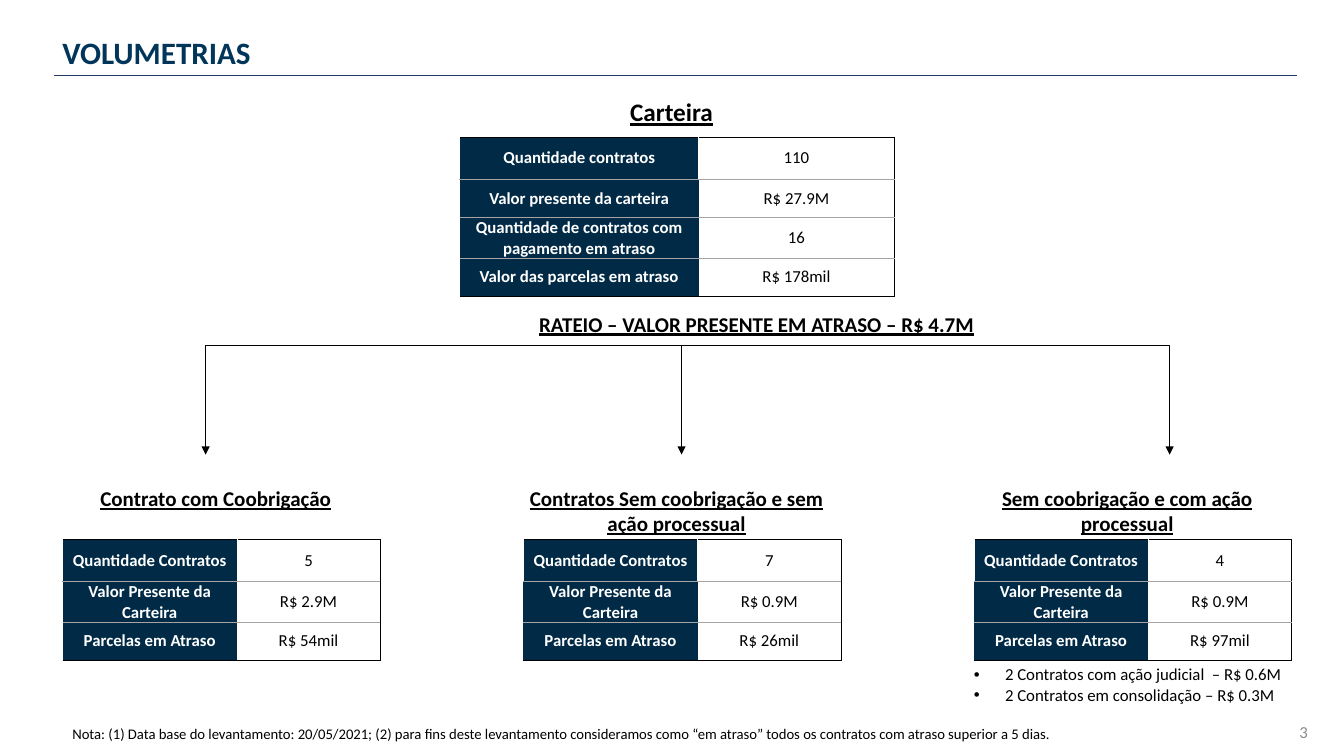
import pptx
import pptx.util
import pptx.dml.color
import pptx.enum.shapes
import pptx.enum.text
import pptx.oxml
import pptx.oxml.ns
import lxml.etree

# Content
TITLE = "VOLUMETRIAS"
PAGE_NUMBER = "3"
PORTFOLIO = ("Carteira", [
    ("Quantidade contratos", "110"),
    ("Valor presente da carteira", "R$ 27.9M"),
    ("Quantidade de contratos com pagamento em atraso", "16"),
    ("Valor das parcelas em atraso", "R$ 178mil"),
])
SPLIT = "RATEIO – VALOR PRESENTE EM ATRASO – R$ 4.7M"
BRANCH_LABELS = ("Quantidade Contratos", "Valor Presente da Carteira", "Parcelas em Atraso")
BRANCHES = [
    ("Contrato com Coobrigação", ("5", "R$ 2.9M", "R$ 54mil")),
    ("Contratos Sem coobrigação e sem ação processual", ("7", "R$ 0.9M", "R$ 26mil")),
    ("Sem coobrigação e com ação processual", ("4", "R$ 0.9M", "R$ 97mil")),
]
DETAILS = ["2 Contratos com ação judicial  – R$ 0.6M", "2 Contratos em consolidação – R$ 0.3M"]
NOTE = ("Nota: (1) Data base do levantamento: 20/05/2021; (2) para fins deste levantamento "
        "consideramos como “em atraso” todos os contratos com atraso superior a 5 dias.")

COLORS = {"title": "02355A", "rule": "203864", "navy": "002A46", "white": "FFFFFF",
          "black": "000000", "grid": "A5A5A5", "number": "8C8C8C"}
FONT = "Calibri"

# Grid, in inches
WIDTH, HEIGHT = 13.33, 7.5
BRANCH_LEFTS = (0.62, 5.19, 9.66)
BRANCH_COLUMNS, PORTFOLIO_COLUMNS = (1.73, 1.42), (2.37, 1.94)
FIRST_ROW, OTHER_ROW = 0.42, 0.38
INSET = 0.1
HEADING_WIDTH = 3.24
HEADING_TOP, BRANCH_TOP = 4.77, 5.35
ARROW_TOP, ARROW_BOTTOM = 3.43, 4.51
ARROW_ENDS = (2.04, 6.76, 11.6)
ELBOW_START = 6.88

inch = pptx.util.Inches
Align = pptx.enum.text.PP_ALIGN
Anchor = pptx.enum.text.MSO_ANCHOR
Connector = pptx.enum.shapes.MSO_CONNECTOR

deck = pptx.Presentation()
deck.slide_width, deck.slide_height = inch(WIDTH), inch(HEIGHT)
page = deck.slides.add_slide(deck.slide_layouts[6])


def color(name):
    return pptx.dml.color.RGBColor.from_string(COLORS[name])


def child(parent, tag, **attributes):
    element = lxml.etree.SubElement(parent, pptx.oxml.ns.qn(tag))
    for key, value in attributes.items():
        element.set(key, value)
    return element


def write(frame, text, size=12, ink="black", bold=False, underline=False,
          align=Align.LEFT, spacing=None, bullet=False):
    lines = [text] if isinstance(text, str) else text
    for index, line in enumerate(lines):
        para = frame.add_paragraph() if index else frame.paragraphs[0]
        if bullet:
            properties = para._p.get_or_add_pPr()
            properties.set("marL", str(inch(0.31)))
            properties.set("indent", str(-inch(0.31)))
            child(properties, "a:buFont", typeface="Arial")
            child(properties, "a:buChar", char="•")
        para.alignment = align
        if spacing:
            para.line_spacing = spacing
        span = para.add_run()
        span.text = line
        font = span.font
        font.name, font.size, font.bold = FONT, pptx.util.Pt(size), bold
        font.underline = underline
        font.color.rgb = color(ink)


def add_text(text, left, top, width, height, wrap=True, anchor=Anchor.TOP, **style):
    box = page.shapes.add_textbox(inch(left), inch(top), inch(width), inch(height))
    box.text_frame.word_wrap = wrap
    box.text_frame.vertical_anchor = anchor
    write(box.text_frame, text, **style)


def add_heading(text, left, top, height, size):
    add_text(text, left, top, HEADING_WIDTH, height, size=size, bold=True,
             underline=True, align=Align.CENTER)


def add_line(kind, start, end, ink, arrow=False):
    line = page.shapes.add_connector(kind, *(inch(value) for value in start + end))
    line.line.color.rgb = color(ink)
    line.line.width = pptx.util.Pt(0.5)
    if arrow:
        child(line.line._get_or_add_ln(), "a:tailEnd", type="triangle")
    if kind == Connector.ELBOW:
        guides = line._element.spPr.find(".//" + pptx.oxml.ns.qn("a:avLst"))
        if guides is None:
            guides = child(line._element.spPr.find(pptx.oxml.ns.qn("a:prstGeom")), "a:avLst")
        child(guides, "a:gd", name="adj1", fmla="val 100000")
    child(line._element.spPr, "a:effectLst")


def set_borders(cell, **sides):
    """Border colour by side; None leaves that side without a line."""
    properties = cell._tc.get_or_add_tcPr()
    for position, side in enumerate("LRTB"):
        border = child(properties, "a:ln" + side, w=str(pptx.util.Pt(0.5)))
        if sides[side]:
            child(child(border, "a:solidFill"), "a:srgbClr", val=COLORS[sides[side]])
        else:
            child(border, "a:noFill")
        properties.insert(position, border)


def add_grid(rows, left, top, columns):
    heights = [FIRST_ROW] + [OTHER_ROW] * (len(rows) - 1)
    table = page.shapes.add_table(len(rows), 2, inch(left), inch(top),
                                  inch(sum(columns)), inch(sum(heights))).table
    table.first_row = table.horz_banding = False
    for column, width in zip(table.columns, columns):
        column.width = inch(width)
    for index, (row, height) in enumerate(zip(rows, heights)):
        table.rows[index].height = inch(height)
        inner = None if index else "white"
        for side, text in enumerate(row):
            cell, label = table.cell(index, side), side == 0
            cell.margin_left = cell.margin_right = cell.margin_top = cell.margin_bottom = 0
            cell.vertical_anchor = Anchor.MIDDLE
            cell.fill.solid()
            cell.fill.fore_color.rgb = color("navy" if label else "white")
            write(cell.text_frame, text, bold=label,
                  ink="white" if label else "black", align=Align.CENTER)
            set_borders(cell, L=inner, R=inner if label else "black",
                        T="grid" if index else "black",
                        B="grid" if index < len(rows) - 1 else "black")


# Title, rule and page number
add_line(Connector.STRAIGHT, (0.54, 0.75), (12.86, 0.75), "rule")
add_text(PAGE_NUMBER, 9.55, 7.03, 3.52, 0.47, anchor=Anchor.MIDDLE,
         ink="number", align=Align.RIGHT)
add_text(TITLE, 0.52, 0.35, 12.3, 0.41, size=22.2, ink="title", bold=True, spacing=0.8)

# Whole portfolio
heading, portfolio_rows = PORTFOLIO
add_heading(heading, 5.04, 0.91, 0.4, 18)
add_grid(portfolio_rows, 4.56, 1.36, PORTFOLIO_COLUMNS)

# Split into branches
add_text(SPLIT, 5.25, 3.04, 4.57, 0.35, wrap=False, size=15, bold=True, underline=True)
for position, end in enumerate(ARROW_ENDS):
    straight = position == 1
    add_line(Connector.STRAIGHT if straight else Connector.ELBOW,
             (end if straight else ELBOW_START, ARROW_TOP), (end, ARROW_BOTTOM),
             "black", arrow=True)
for left, (heading, values) in zip(BRANCH_LEFTS, BRANCHES):
    add_heading(heading, left - INSET, HEADING_TOP, 0.61, 15)
    add_grid(list(zip(BRANCH_LABELS, values)), left, BRANCH_TOP, BRANCH_COLUMNS)

# Details and footnote
add_text(DETAILS, BRANCH_LEFTS[-1] - INSET, 6.54, 3.3, 0.5, wrap=False, bullet=True)
add_text(NOTE, BRANCH_LEFTS[0], 7.14, 12.37, 0.28, size=10.5, align=Align.JUSTIFY)

deck.save("out.pptx")
